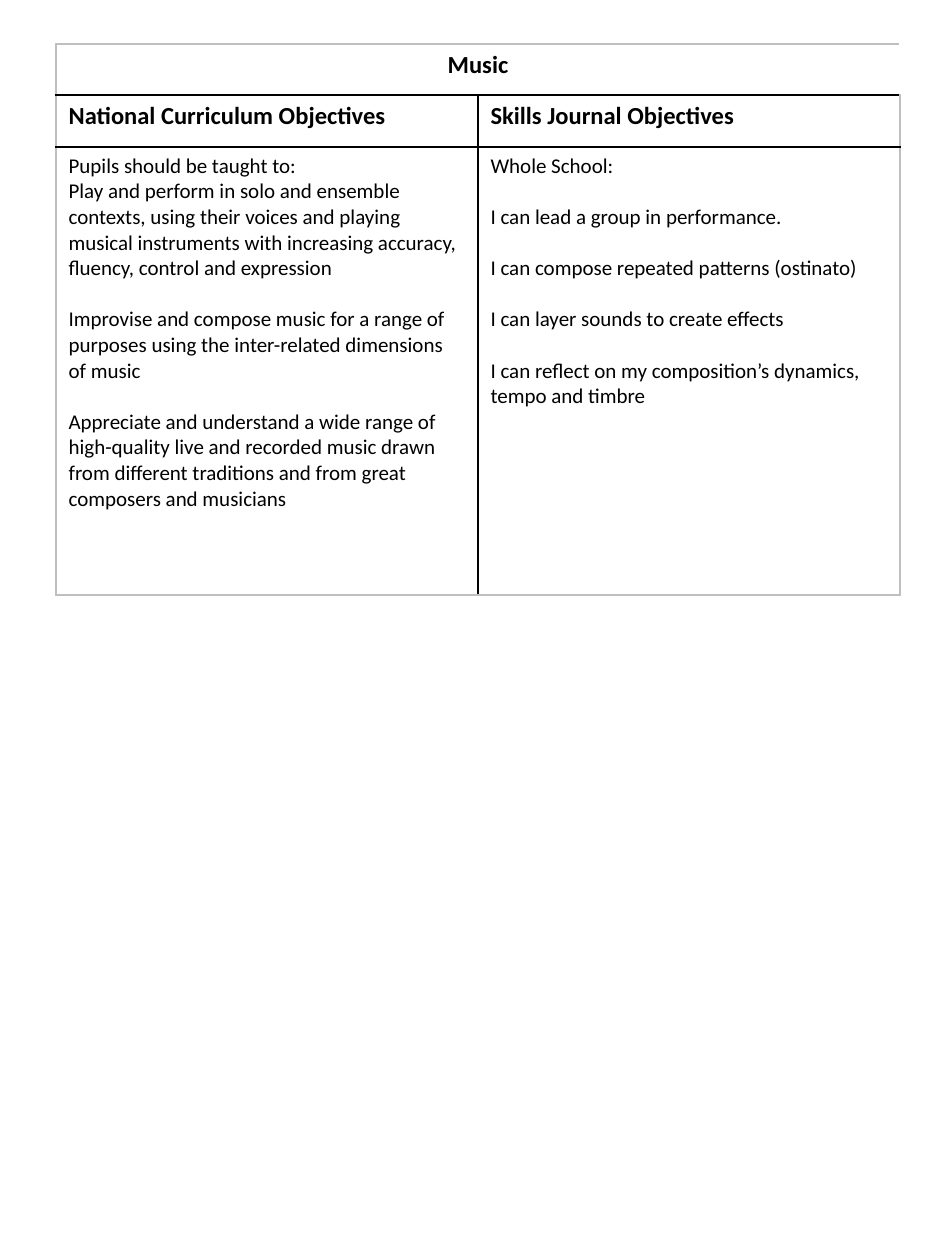
from lxml.etree import SubElement
from pptx import Presentation
from pptx.dml.color import RGBColor
from pptx.enum.text import PP_ALIGN
from pptx.oxml.ns import qn
from pptx.util import Emu, Pt

PIXELS_PER_INCH = 126
BLACK, GREY, WHITE = "000000", "BFBFBF", "FFFFFF"
COLUMN_WIDTHS = [422, 422]
ROW_HEIGHTS = [51, 52, 448]
HEADING = {"name": "Calibri", "size": Pt(14), "bold": True}
BODY = {"name": "Calibri", "size": Pt(12), "bold": False}
BLANK_LINE = Pt(14.65)

SUBJECT = "Music"
HEADINGS = ["National Curriculum Objectives", "Skills Journal Objectives"]
OBJECTIVES = [
    [
        ["Pupils should be taught to:",
         "Play and perform in solo and ensemble contexts, using their voices and playing "
         "musical instruments with increasing accuracy, fluency, control and expression"],
        ["Improvise and compose music for a range of purposes using the inter-related "
         "dimensions of music"],
        ["Appreciate and understand a wide range of high-quality live and recorded music "
         "drawn from different traditions and from great composers and musicians"],
    ],
    [
        ["Whole School:"],
        ["I can lead a group in performance."],
        ["I can compose repeated patterns (ostinato)"],
        ["I can layer sounds to create effects"],
        ["I can reflect on my composition’s dynamics, tempo and timbre"],
    ],
]


def px(length):
    return Emu(round(length * 914400 / PIXELS_PER_INCH))


def color(value):
    return RGBColor.from_string(value)


def set_format(target, values):
    for name, value in values.items():
        setattr(target, name, value)


def write_cell(cell, groups, font_format, alignment=PP_ALIGN.LEFT):
    frame = cell.text_frame
    lines = [(text, group_index > 0 and text_index == 0)
             for group_index, group in enumerate(groups)
             for text_index, text in enumerate(group)]
    for index, (text, starts_group) in enumerate(lines):
        paragraph = frame.add_paragraph() if index else frame.paragraphs[0]
        set_format(paragraph, {
            "alignment": alignment,
            "space_before": BLANK_LINE if starts_group else Pt(0),
        })
        run = paragraph.add_run()
        run.text = text
        set_format(run.font, font_format)
        run.font.color.rgb = color(BLACK)


def add_border(cell, side, line_color):
    line = SubElement(cell._tc.get_or_add_tcPr(), qn(f"a:ln{side}"), w=str(Pt(1)))
    fill = SubElement(line, qn("a:solidFill"))
    SubElement(fill, qn("a:srgbClr"), val=line_color)


def style_cells(table):
    last_row, last_column = len(ROW_HEIGHTS) - 1, len(COLUMN_WIDTHS) - 1
    for row_index, row in enumerate(table.rows):
        for column_index, cell in enumerate(row.cells):
            outer_sides = {
                "L": column_index == 0,
                "R": column_index == last_column,
                "T": row_index == 0,
                "B": row_index == last_row,
            }
            for side, is_outer in outer_sides.items():
                inside_merge = row_index == 0 and side in "LR" and not is_outer
                if not inside_merge:
                    add_border(cell, side, GREY if is_outer else BLACK)
            cell.fill.solid()
            cell.fill.fore_color.rgb = color(WHITE)


def add_objectives_table(slide):
    frame = slide.shapes.add_table(
        len(ROW_HEIGHTS), len(COLUMN_WIDTHS), px(56), px(44),
        px(sum(COLUMN_WIDTHS)), px(sum(ROW_HEIGHTS)))
    table = frame.table
    set_format(table, {"first_row": False, "horz_banding": False})
    for column, width in zip(table.columns, COLUMN_WIDTHS):
        column.width = px(width)
    for row, height in zip(table.rows, ROW_HEIGHTS):
        row.height = px(height)
    style_cells(table)
    table.cell(0, 0).merge(table.cell(0, 1))
    write_cell(table.cell(0, 0), [[SUBJECT]], HEADING, PP_ALIGN.CENTER)
    for index, (heading, groups) in enumerate(zip(HEADINGS, OBJECTIVES)):
        write_cell(table.cell(1, index), [[heading]], HEADING)
        write_cell(table.cell(2, index), groups, BODY)


def main():
    presentation = Presentation()
    set_format(presentation, {"slide_width": px(945), "slide_height": px(1260)})
    slide = presentation.slides.add_slide(presentation.slide_layouts[6])
    add_objectives_table(slide)
    presentation.save("out.pptx")


if __name__ == "__main__":
    main()
